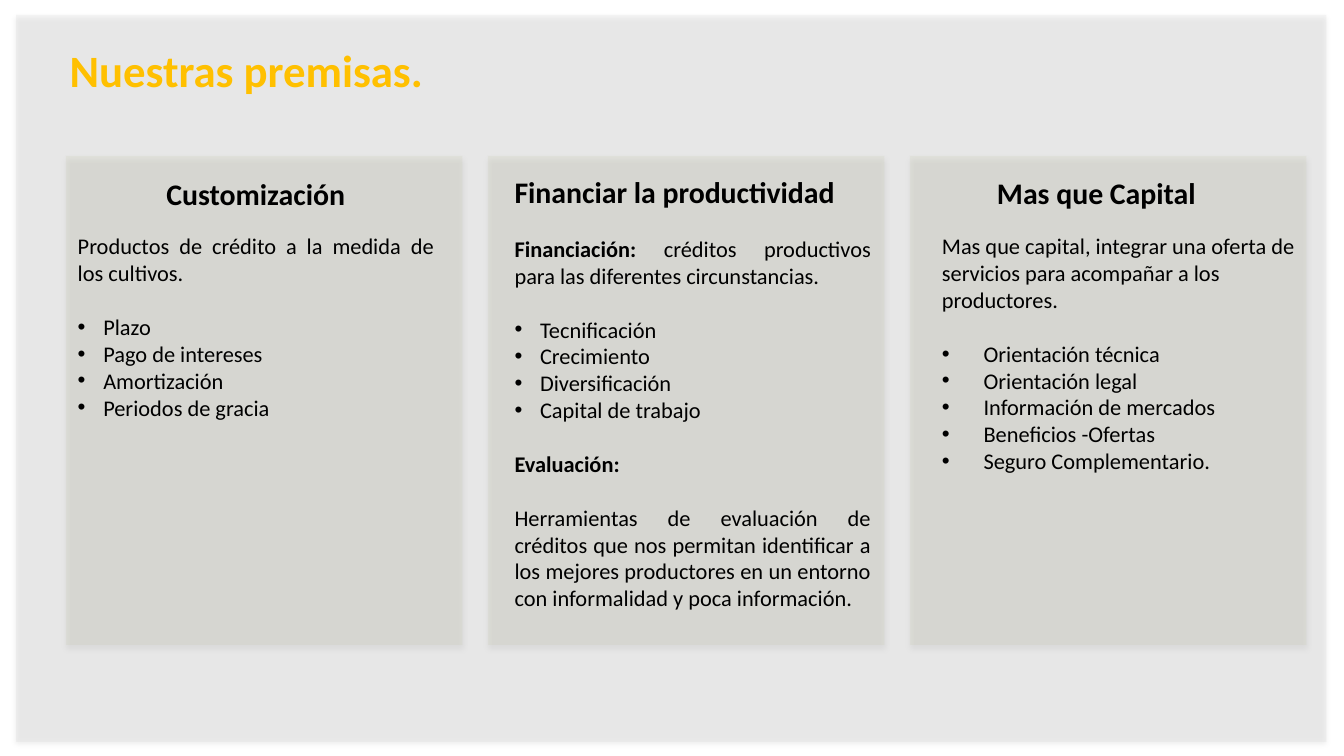
from lxml import etree
from pptx import Presentation
from pptx import util as u
from pptx.dml.color import RGBColor
from pptx.enum import shapes, text
from pptx.oxml.ns import qn

PANEL_GREY = RGBColor(0xD3, 0xD3, 0xD3)
CARD_OLIVE = RGBColor(0xC4, 0xC6, 0xA4)
GOLD = RGBColor(0xFF, 0xC0, 0x00)
BLACK = RGBColor(0x00, 0x00, 0x00)

FONT = "Calibri"
SLIDE_WIDTH = 10
SLIDE_HEIGHT = SLIDE_WIDTH * 9 / 16
PANEL = (0.12, 0.11, 9.75, 5.41)
TITLE = "Nuestras premisas."
TITLE_AT = (0.42, 0.27, 9.32, 0.5)
CARD_LEFT, CARD_TOP, CARD_PITCH = 0.49, 1.16, 3.14
CARD_SIZE = (2.95, 3.64)
BODY_WIDTH = 2.85
HEADING_HEIGHT = 0.37
BLANK_LINE = 14.4

JUSTIFY, LEFT = text.PP_ALIGN.JUSTIFY, text.PP_ALIGN.LEFT

COLUMNS = [
    {
        "heading": "Customización", "heading_at": (0.65, 0.10), "heading_width": 1.6,
        "body_at": (-0.01, 0.52), "body_height": 2.12, "align": JUSTIFY, "indent": 0.19,
        "intro": [("Productos de crédito a la medida de los cultivos.", False)],
        "bullets": ["Plazo", "Pago de intereses", "Amortización", "Periodos de gracia"],
        "closing": [],
    },
    {
        "heading": "Financiar la productividad", "heading_at": (0.10, 0.08), "heading_width": 2.72,
        "body_at": (0.10, 0.54), "body_height": 3.53, "align": JUSTIFY, "indent": 0.19,
        "intro": [("Financiación: ", True),
                  ("créditos productivos para las diferentes circunstancias.", False)],
        "bullets": ["Tecnificación", "Crecimiento", "Diversificación", "Capital de trabajo"],
        "closing": [
            ("Evaluación:", True),
            ("Herramientas de evaluación de créditos que nos permitan identificar a los mejores "
             "productores en un entorno con informalidad y poca información.", False),
        ],
    },
    {
        "heading": "Mas que Capital", "heading_at": (0.55, 0.09), "heading_width": 1.8,
        "body_at": (0.14, 0.52), "body_height": 2.74, "align": LEFT, "indent": 0.31,
        "intro": [("Mas que capital, integrar una oferta de servicios para acompañar a los "
                   "productores.", False)],
        "bullets": ["Orientación técnica", "Orientación legal", "Información de mercados",
                    "Beneficios -Ofertas", "Seguro Complementario."],
        "closing": [],
    },
]


def inches(values):
    return [u.Inches(value) for value in values]


def set_alpha(color, percent):
    etree.SubElement(color, qn("a:alpha"), val=str(percent * 1000))


def add_panel(page, place, color, opacity):
    panel = page.shapes.add_shape(shapes.MSO_SHAPE.RECTANGLE, *inches(place))
    panel.fill.solid()
    panel.fill.fore_color.rgb = color
    panel.line.fill.background()
    panel.shadow.inherit = False
    properties = panel._element.spPr
    set_alpha(properties.find(qn("a:solidFill")).find(qn("a:srgbClr")), opacity)
    shadow = etree.SubElement(
        properties.find(qn("a:effectLst")), qn("a:outerShdw"),
        blurRad=str(u.Pt(3.1)), dist=str(u.Pt(1.8)), dir="5400000", rotWithShape="0")
    set_alpha(etree.SubElement(shadow, qn("a:srgbClr"), val=str(BLACK)), 35)


def add_frame(page, place, wrap=True):
    frame = page.shapes.add_textbox(*inches(place)).text_frame
    frame.word_wrap = wrap
    frame.auto_size = text.MSO_AUTO_SIZE.SHAPE_TO_FIT_TEXT
    return frame


def add_span(para, words, size, color=BLACK, bold=False):
    span = para.add_run()
    span.text = words
    span.font.name = FONT
    span.font.size = u.Pt(size)
    span.font.bold = bold
    span.font.color.rgb = color


def set_bullet(para, indent):
    properties = para._p.get_or_add_pPr()
    properties.set("marL", str(u.Inches(indent)))
    properties.set("indent", str(-u.Inches(indent)))
    etree.SubElement(properties, qn("a:buFont"), typeface="Arial")
    etree.SubElement(properties, qn("a:buChar"), char="•")


def fill_body(frame, column):
    intro = frame.paragraphs[0]
    intro.alignment = column["align"]
    for words, bold in column["intro"]:
        add_span(intro, words, 12, bold=bold)
    for index, words in enumerate(column["bullets"]):
        para = frame.add_paragraph()
        para.alignment = column["align"]
        para.space_before = u.Pt(0 if index else BLANK_LINE)
        set_bullet(para, column["indent"])
        add_span(para, words, 12)
    for words, bold in column["closing"]:
        para = frame.add_paragraph()
        para.alignment = column["align"]
        para.space_before = u.Pt(BLANK_LINE)
        add_span(para, words, 12, bold=bold)


def add_column(page, index, column):
    left = CARD_LEFT + index * CARD_PITCH
    add_panel(page, (left, CARD_TOP, *CARD_SIZE), CARD_OLIVE, 16)
    across, down = column["heading_at"]
    heading = add_frame(page, (left + across, CARD_TOP + down,
                               column["heading_width"], HEADING_HEIGHT), wrap=False)
    add_span(heading.paragraphs[0], column["heading"], 16, bold=True)
    across, down = column["body_at"]
    body = add_frame(page, (left + across, CARD_TOP + down,
                            BODY_WIDTH, column["body_height"]))
    fill_body(body, column)


def main():
    deck = Presentation()
    deck.slide_width, deck.slide_height = inches((SLIDE_WIDTH, SLIDE_HEIGHT))
    page = deck.slides.add_slide(deck.slide_layouts[6])
    add_panel(page, PANEL, PANEL_GREY, 20)
    title = add_frame(page, TITLE_AT)
    add_span(title.paragraphs[0], TITLE, 24, GOLD, bold=True)
    for index, column in enumerate(COLUMNS):
        add_column(page, index, column)
    deck.save("out.pptx")


if __name__ == "__main__":
    main()
